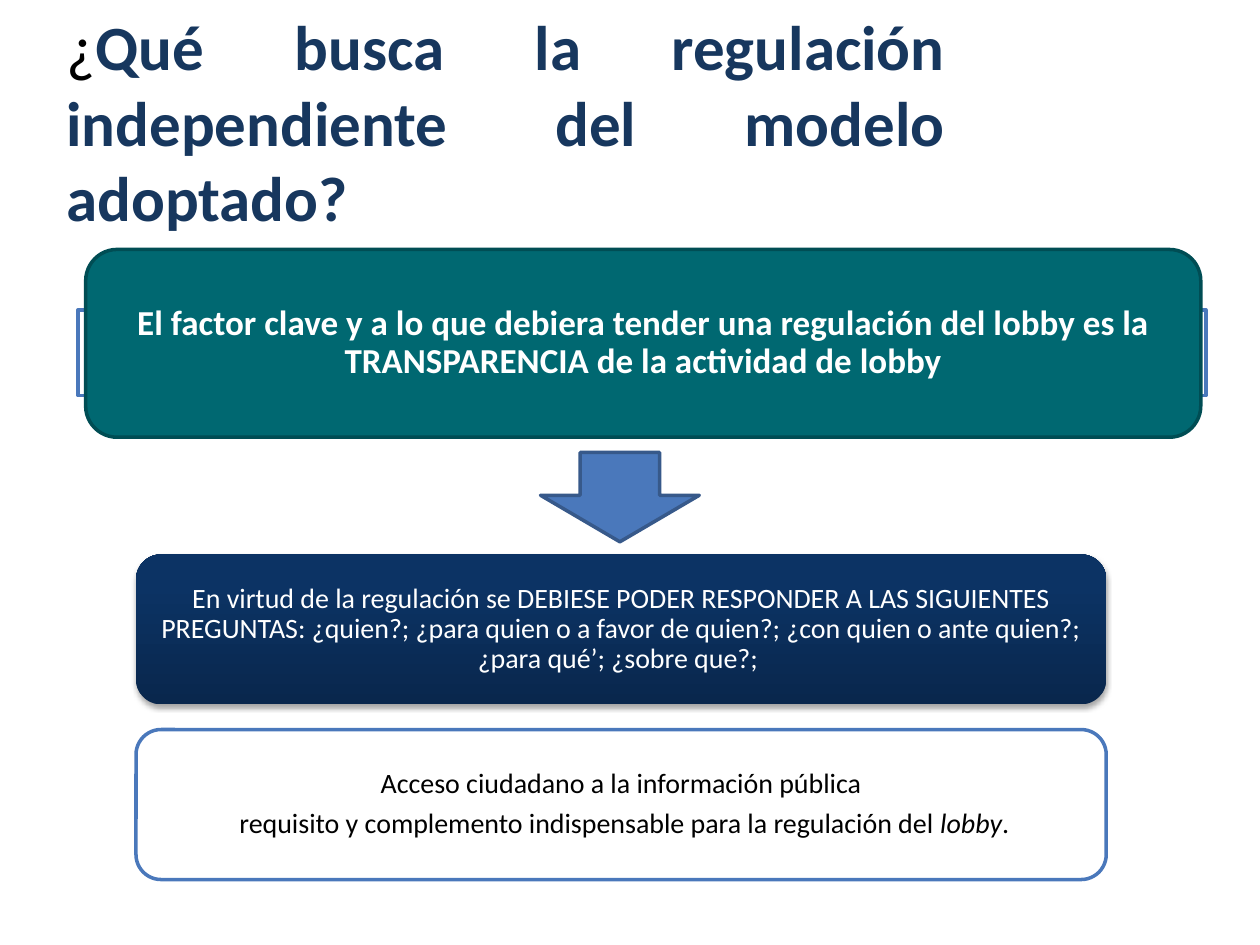
from lxml import etree
from pptx import Presentation
from pptx.dml.color import RGBColor
from pptx.enum import shapes, text
from pptx.oxml import parse_xml
from pptx.oxml.ns import nsdecls, qn
from pptx.util import Inches, Pt

FONT = "Calibri"
WHITE, BLACK, BLUE = "FFFFFF", "000000", "4A78BB"
NAVY_STOPS = [(0, "09274D"), (80, "0C3364"), (100, "0A3366")]
SHAPE = shapes.MSO_SHAPE


def color(hex_value):
    return RGBColor.from_string(hex_value)


def add_run(paragraph, words, size, hex_value, bold=False, italic=False):
    run = paragraph.add_run()
    run.text = words
    font = run.font
    font.name, font.size, font.bold, font.italic = FONT, Pt(size), bold, italic
    font.color.rgb = color(hex_value)


def set_frame(frame, anchor, side, edge):
    """Wrap the text and set its anchor and its side and top/bottom margins."""
    frame.word_wrap = True
    frame.vertical_anchor = anchor
    frame.margin_left = frame.margin_right = Inches(side)
    frame.margin_top = frame.margin_bottom = Inches(edge)


def add_title(slide, box):
    frame = slide.shapes.add_textbox(*map(Inches, box)).text_frame
    set_frame(frame, text.MSO_ANCHOR.TOP, 0.1, 0)
    question = frame.paragraphs[0]
    question.alignment = text.PP_ALIGN.JUSTIFY
    add_run(question, "¿", 36, BLACK)
    add_run(question, "Qué busca la regulación independiente del modelo adoptado?",
            36, "17375E", bold=True)


def add_block(slide, kind, box, fill=None, line=None):
    block = slide.shapes.add_shape(kind, *map(Inches, box))
    block.shadow.inherit = False
    if fill:
        block.fill.solid()
        block.fill.fore_color.rgb = color(fill)
    if line:
        block.line.color.rgb = color(line)
        block.line.width = Pt(2)
    else:
        block.line.fill.background()
    return block


def write_lines(block, lines, size, hex_value, side, edge, bold=False):
    """Fill a block with centred paragraphs, each a list of (words, italic)."""
    frame = block.text_frame
    set_frame(frame, text.MSO_ANCHOR.MIDDLE, side, edge)
    for index, pieces in enumerate(lines):
        paragraph = frame.add_paragraph() if index else frame.paragraphs[0]
        paragraph.alignment = text.PP_ALIGN.CENTER
        paragraph.line_spacing = 0.9
        paragraph.space_after = Pt(0.35 * size)
        for words, italic in pieces:
            add_run(paragraph, words, size, hex_value, bold, italic)


def set_gradient(block, stops):
    block.fill.gradient()
    block.fill.gradient_angle = 90
    stop_list = next(block.element.spPr.iter(qn("a:gsLst")))
    for old_stop in list(stop_list):
        stop_list.remove(old_stop)
    for position, hex_value in stops:
        stop = etree.SubElement(stop_list, qn("a:gs"), pos=str(position * 1000))
        etree.SubElement(stop, qn("a:srgbClr"), val=hex_value)


def set_shadow(block):
    effects = block.element.spPr.find(qn("a:effectLst"))
    effects.append(parse_xml(
        f'<a:outerShdw {nsdecls("a")} blurRad="{Pt(3.1)}" dist="{Pt(1.8)}" '
        'dir="5400000" rotWithShape="0"><a:srgbClr val="000000">'
        '<a:alpha val="35000"/></a:srgbClr></a:outerShdw>'))


def set_opacity(block, percent):
    fill_color = block.element.spPr.find(qn("a:solidFill"))[0]
    etree.SubElement(fill_color, qn("a:alpha"), val=str(percent * 1000))


def main():
    deck = Presentation()
    deck.slide_width, deck.slide_height = Inches(10), Inches(7.5)
    slide = deck.slides.add_slide(deck.slide_layouts[6])

    add_title(slide, (0.43, 0.06, 7.17, 1.83))

    band = add_block(slide, SHAPE.RECTANGLE, (0.62, 2.46, 8.95, 0.68), WHITE, BLUE)
    set_opacity(band, 90)
    key_factor = add_block(slide, SHAPE.ROUNDED_RECTANGLE, (0.68, 1.98, 8.85, 1.49),
                           "006871", "004D54")
    write_lines(key_factor, [[(
        "El factor clave y a lo que debiera tender una regulación del lobby es la "
        "TRANSPARENCIA de la actividad de lobby", False)]],
        20, WHITE, 0.17, 0, bold=True)

    questions, access = (
        add_block(slide, SHAPE.ROUNDED_RECTANGLE, (1.08, top, 7.7, 1.19), fill, line)
        for top, fill, line in ((4.4, None, None), (5.79, WHITE, BLUE)))
    set_gradient(questions, NAVY_STOPS)
    set_shadow(questions)
    write_lines(questions, [[(
        "En virtud de la regulación se DEBIESE PODER RESPONDER A LAS SIGUIENTES "
        "PREGUNTAS: ¿quien?; ¿para quien o a favor de quien?; ¿con quien o ante "
        "quien?; ¿para qué’; ¿sobre que?; ", False)]], 16, WHITE, 0.01, 0.01)
    write_lines(access, [
        [("Acceso ciudadano a la información pública", False)],
        [(" requisito y complemento indispensable para la regulación del ", False),
         ("lobby", True), (".", False)]], 16, BLACK, 0.01, 0.01)

    arrow = add_block(slide, SHAPE.DOWN_ARROW, (4.29, 3.59, 1.26, 0.71), BLUE, "37598A")
    arrow.adjustments[1] = 0.52

    deck.save("out.pptx")


if __name__ == "__main__":
    main()
